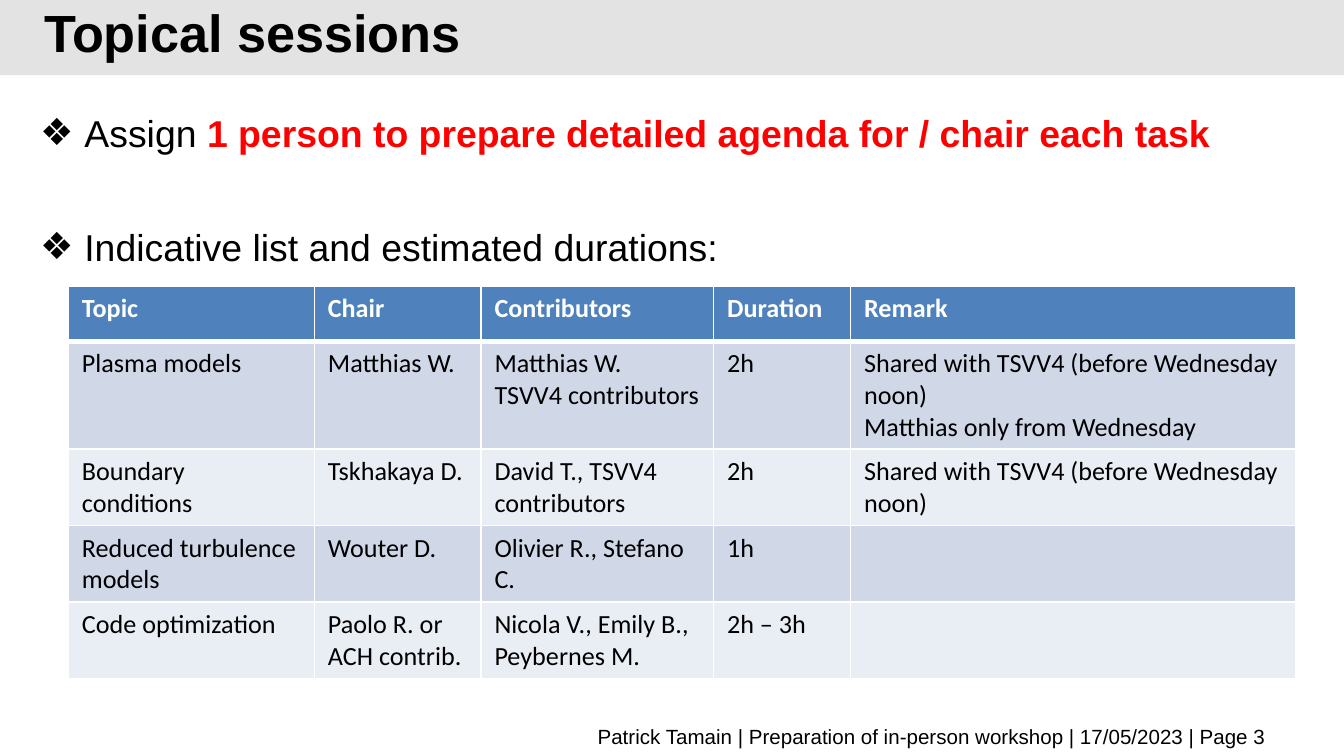
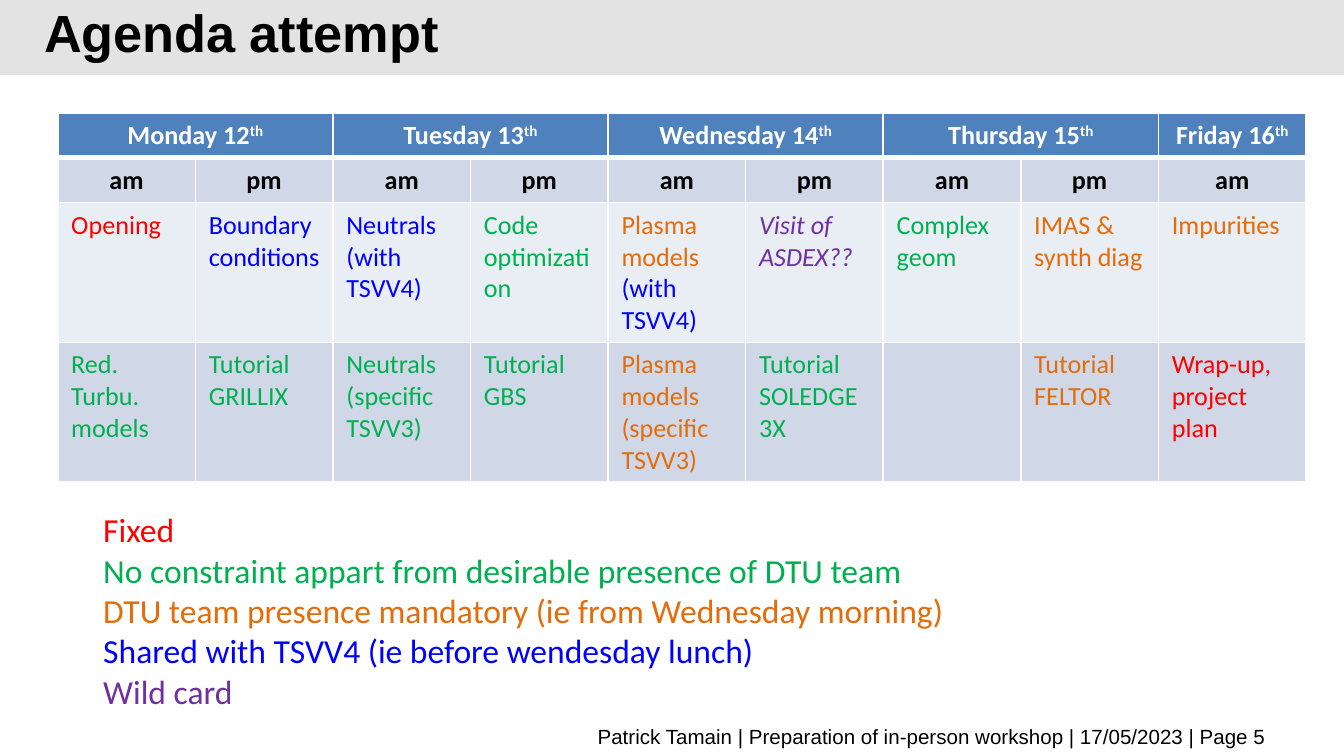
from dataclasses import dataclass

from lxml.etree import SubElement
from pptx import Presentation
from pptx.dml.color import RGBColor
from pptx.enum.shapes import MSO_SHAPE
from pptx.enum.text import MSO_ANCHOR, PP_ALIGN
from pptx.oxml import parse_xml
from pptx.oxml.ns import nsdecls, qn
from pptx.util import Inches, Pt

# The slide is a grid of square cells: 100 columns by 56.25 rows.
COLUMNS, ROWS = 100, 56.25
CELL = Inches(0.1)

BLACK = RGBColor(0x00, 0x00, 0x00)
WHITE = RGBColor(0xFF, 0xFF, 0xFF)
BAND_GREY = RGBColor(0xE3, 0xE3, 0xE3)
HEADER_BLUE = RGBColor(0x4F, 0x81, 0xBD)
DARK_STRIPE = RGBColor(0xD0, 0xD8, 0xE8)
LIGHT_STRIPE = RGBColor(0xE9, 0xED, 0xF4)
RED = RGBColor(0xFF, 0x00, 0x00)
GREEN = RGBColor(0x00, 0xB0, 0x50)
ORANGE = RGBColor(0xE4, 0x6C, 0x0A)
BLUE = RGBColor(0x00, 0x00, 0xFF)
PURPLE = RGBColor(0x70, 0x30, 0xA0)

TITLE_FONT, TABLE_FONT = "Arial", "Calibri"
FOOTER = "Patrick Tamain | Preparation of in-person workshop | 17/05/2023 | Page {}"


@dataclass
class Box:
    """An area of the slide, in grid columns and rows."""
    left: float
    top: float
    width: float
    height: float

    def place(self):
        return [round(side * CELL) for side in
                (self.left, self.top, self.width, self.height)]


BAND = Box(0, 0, COLUMNS, 5.6)
TITLE = Box(2.3, 0.6, 86.3, 3.8)
FOOTER_LINE = Box(5.1, 53.7, 90.1, 2.2)

TOPICS = [
    ["Topic", "Chair", "Contributors", "Duration", "Remark"],
    ["Plasma models", "Matthias W.", "Matthias W.\nTSVV4 contributors", "2h",
     "Shared with TSVV4 (before Wednesday noon)\nMatthias only from Wednesday"],
    ["Boundary conditions", "Tskhakaya D.", "David T., TSVV4 contributors", "2h",
     "Shared with TSVV4 (before Wednesday noon)"],
    ["Reduced turbulence models", "Wouter D.", "Olivier R., Stefano C.", "1h", ""],
    ["Code optimization", "Paolo R. or ACH contrib.",
     "Nicola V., Emily B., Peybernes M.", "2h – 3h", ""],
]
TOPIC_WIDTHS = [18.3, 12.4, 17.3, 10.2, 33.1]
TOPIC_HEIGHTS = [4.1, 8, 5.7, 5.7, 5.7]

DAYS = ["Monday 12", "Tuesday 13", "Wednesday 14", "Thursday 15", "Friday 16"]
SESSIONS = [
    [("Opening", RED), ("Boundary conditions", BLUE), ("Neutrals (with TSVV4)", BLUE),
     ("Code optimization", GREEN), ("Plasma models ", ORANGE),
     ("Visit of ASDEX??", PURPLE), ("Complex geom", GREEN),
     ("IMAS & synth diag", ORANGE), ("Impurities", ORANGE)],
    [("Red. Turbu. models", GREEN), ("Tutorial GRILLIX", GREEN),
     ("Neutrals (specific TSVV3)", GREEN), ("Tutorial GBS", GREEN),
     ("Plasma models (specific TSVV3)", ORANGE), ("Tutorial SOLEDGE3X", GREEN),
     ("", BLACK), ("Tutorial FELTOR", ORANGE), ("Wrap-up, project plan", RED)],
]
AGENDA_WIDTHS = [10.24] * 8 + [11]
AGENDA_HEIGHTS = [3.3, 3.3, 10.4, 10.4]

LEGEND = [
    ("Fixed", RED),
    ("No constraint appart from desirable presence of DTU team", GREEN),
    ("DTU team presence mandatory (ie from Wednesday morning)", ORANGE),
    ("Shared with TSVV4 (ie before wendesday lunch)", BLUE),
    ("Wild card", PURPLE),
]


def write(para, text, size=14, font=TABLE_FONT, color=BLACK, bold=False,
          italic=False, raised=False):
    span = para.add_run()
    span.text = text
    span.font.size = Pt(size)
    span.font.name = font
    span.font.color.rgb = color
    span.font.bold = bold
    span.font.italic = italic
    if raised:
        span._r.get_or_add_rPr().set("baseline", "30000")


def next_para(frame):
    """Return the first paragraph while it is unused, else a new one."""
    last = frame.paragraphs[-1]
    return frame.add_paragraph() if last.runs else last


def add_text_frame(page, box, anchor=MSO_ANCHOR.TOP):
    frame = page.shapes.add_textbox(*box.place()).text_frame
    frame.word_wrap = True
    frame.vertical_anchor = anchor
    return frame


def add_page(deck, title, number):
    """Add a blank slide with the band, title and footer."""
    page = deck.slides.add_slide(deck.slide_layouts[6])
    band = page.shapes.add_shape(MSO_SHAPE.RECTANGLE, *BAND.place())
    band.shadow.inherit = False
    band.fill.solid()
    band.fill.fore_color.rgb = BAND_GREY
    band.line.fill.background()

    para = add_text_frame(page, TITLE, MSO_ANCHOR.MIDDLE).paragraphs[0]
    para.line_spacing = Pt(32)
    write(para, title, size=28, font=TITLE_FONT, bold=True)

    para = add_text_frame(page, FOOTER_LINE, MSO_ANCHOR.MIDDLE).paragraphs[0]
    para.alignment = PP_ALIGN.RIGHT
    write(para, FOOTER.format(number), size=11, font=TITLE_FONT)
    return page


def add_bullet(frame, spans, space_before=0):
    para = next_para(frame)
    properties = para._p.get_or_add_pPr()
    properties.set("marL", str(Inches(0.33)))
    properties.set("indent", str(-Inches(0.38)))
    color = SubElement(properties, qn("a:buClr"))
    SubElement(color, qn("a:srgbClr"), val=str(BLACK))
    SubElement(properties, qn("a:buFont"), typeface=TITLE_FONT)
    SubElement(properties, qn("a:buChar"), char="❖")
    para.space_before = Pt(space_before)
    for text, style in spans:
        write(para, text, size=20, font=TITLE_FONT, **style)


def set_borders(cell, top, bottom):
    """Draw white cell borders; top and bottom are widths in points."""
    properties = cell._tc.get_or_add_tcPr()
    widths = {"lnL": 1, "lnR": 1, "lnT": top, "lnB": bottom}
    for position, (side, width) in enumerate(widths.items()):
        properties.insert(position, parse_xml(
            f'<a:{side} {nsdecls("a")} w="{Pt(width)}"><a:solidFill>'
            f'<a:srgbClr val="{WHITE}"/></a:solidFill></a:{side}>'))


def add_grid(page, box, widths, heights):
    """Add an empty table with a header row and striped body rows."""
    table = page.shapes.add_table(len(heights), len(widths), *box.place()).table
    table.horz_banding = False
    for column, width in zip(table.columns, widths):
        column.width = round(width * CELL)
    for index, (row, height) in enumerate(zip(table.rows, heights)):
        row.height = round(height * CELL)
        stripe = DARK_STRIPE if index % 2 else LIGHT_STRIPE
        for cell in row.cells:
            cell.fill.solid()
            cell.fill.fore_color.rgb = HEADER_BLUE if index == 0 else stripe
            set_borders(cell, top=3 if index == 1 else 1,
                        bottom=3 if index == 0 else 1)
    return table


def fill_cell(cell, text, centred=False, **style):
    for line in filter(None, text.split("\n")):
        para = next_para(cell.text_frame)
        if centred:
            para.alignment = PP_ALIGN.CENTER
        write(para, line, **style)


def add_topic_table(page, box):
    table = add_grid(page, box, TOPIC_WIDTHS, TOPIC_HEIGHTS)
    for row, texts in enumerate(TOPICS):
        header = row == 0
        for column, text in enumerate(texts):
            fill_cell(table.cell(row, column), text, bold=header,
                      color=WHITE if header else BLACK)


def add_agenda_table(page, box):
    table = add_grid(page, box, AGENDA_WIDTHS, AGENDA_HEIGHTS)
    last = len(AGENDA_WIDTHS) - 1
    for index, day in enumerate(DAYS):
        head = table.cell(0, 2 * index)
        if 2 * index < last:
            head.merge(table.cell(0, 2 * index + 1))
        fill_cell(head, day, centred=True, color=WHITE, bold=True)
        write(head.text_frame.paragraphs[0], "th", color=WHITE, bold=True, raised=True)
    for column in range(last + 1):
        fill_cell(table.cell(1, column), "pm" if column % 2 else "am",
                  centred=True, bold=True)
    for row, sessions in enumerate(SESSIONS, start=2):
        for column, (text, color) in enumerate(sessions):
            fill_cell(table.cell(row, column), text, color=color,
                      italic=color == PURPLE)
    plasma = table.cell(2, 4).text_frame.paragraphs[0]
    write(plasma, "(with TSVV4)", color=BLUE)


def add_legend(page, box):
    frame = add_text_frame(page, box)
    for text, color in LEGEND:
        write(next_para(frame), text, size=18, color=color)


def add_topics_page(deck):
    page = add_page(deck, "Topical sessions", 3)
    frame = add_text_frame(page, Box(2, 7.7, 93.7, 13.4))
    add_bullet(frame, [
        ("Assign ", {}),
        ("1 person to prepare detailed agenda for / chair each task",
         {"color": RED, "bold": True})])
    add_bullet(frame, [("Indicative list and estimated durations:", {})],
               space_before=37)
    add_topic_table(page, Box(5.1, 21.3, sum(TOPIC_WIDTHS), sum(TOPIC_HEIGHTS)))


def add_agenda_page(deck):
    page = add_page(deck, "Agenda attempt", 5)
    add_agenda_table(page, Box(4.3, 8.4, sum(AGENDA_WIDTHS), sum(AGENDA_HEIGHTS)))
    add_legend(page, Box(6.7, 37.4, 71.7, 16.2))


def main():
    deck = Presentation()
    deck.slide_width = round(COLUMNS * CELL)
    deck.slide_height = round(ROWS * CELL)
    add_topics_page(deck)
    add_agenda_page(deck)
    deck.save("out.pptx")


if __name__ == "__main__":
    main()
